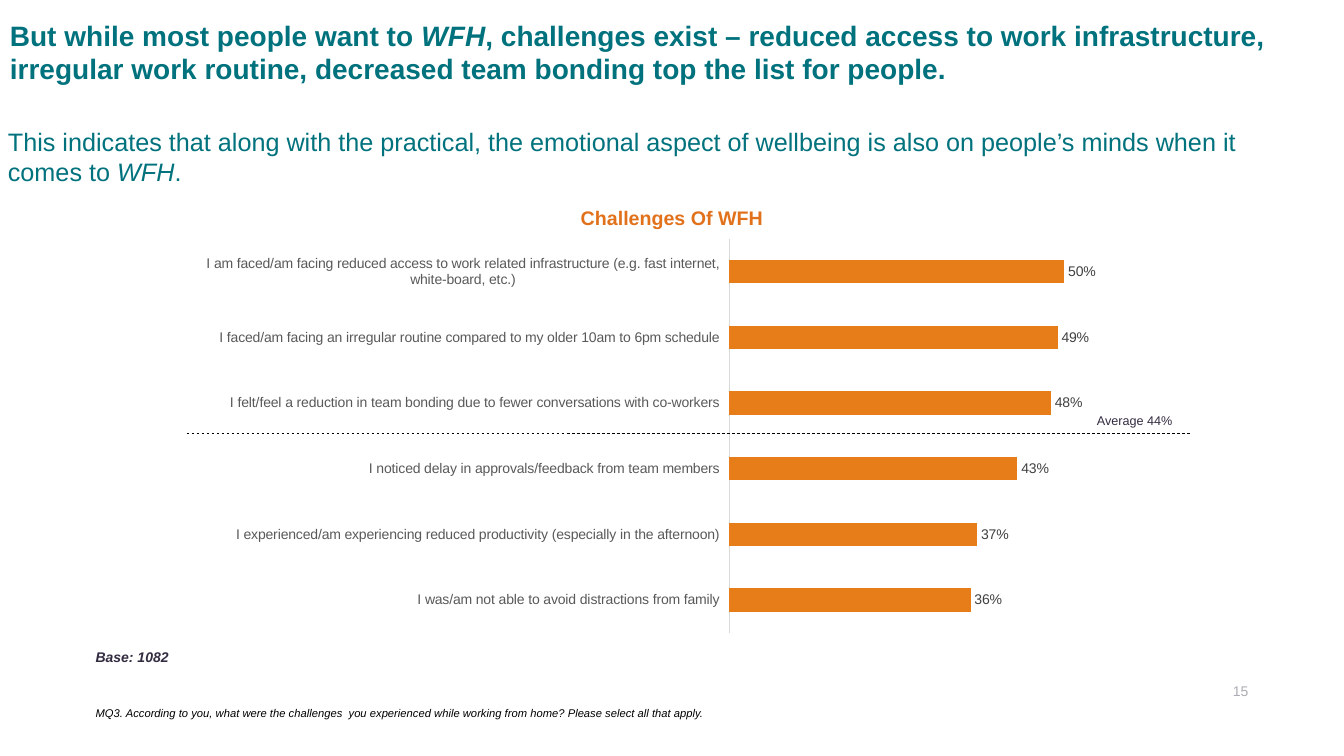
from lxml import etree
from pptx import Presentation
from pptx.chart.data import CategoryChartData
from pptx.dml.color import RGBColor
from pptx.enum.chart import XL_CHART_TYPE, XL_LABEL_POSITION, XL_TICK_LABEL_POSITION, XL_TICK_MARK
from pptx.enum.dml import MSO_LINE
from pptx.enum.shapes import MSO_CONNECTOR
from pptx.enum.text import PP_ALIGN
from pptx.oxml import parse_xml
from pptx.oxml.ns import nsdecls, qn
from pptx.util import Inches, Pt

BAR = XL_CHART_TYPE.BAR_CLUSTERED
OUTSIDE_END = XL_LABEL_POSITION.OUTSIDE_END
LABELS_LOW = XL_TICK_LABEL_POSITION.LOW
NO_TICK = XL_TICK_MARK.NONE
DASH = MSO_LINE.DASH
STRAIGHT = MSO_CONNECTOR.STRAIGHT
LEFT, CENTER, RIGHT = PP_ALIGN.LEFT, PP_ALIGN.CENTER, PP_ALIGN.RIGHT

TEAL = RGBColor(0x00, 0x72, 0x7D)
ORANGE = RGBColor(0xE1, 0x71, 0x1B)
BAR_ORANGE = RGBColor(0xE7, 0x7D, 0x18)
INK = RGBColor(0x33, 0x2C, 0x41)
PALE_INK = RGBColor(0xAD, 0xAB, 0xB3)
BLACK = RGBColor(0x00, 0x00, 0x00)
AXIS_TEXT = RGBColor(0x59, 0x59, 0x59)
VALUE_TEXT = RGBColor(0x40, 0x40, 0x40)
AXIS_LINE = RGBColor(0xD9, 0xD9, 0xD9)

CHALLENGES = {
    "I am faced/am facing reduced access to work related infrastructure (e.g. fast internet, white-board, etc.)": 0.50,
    "I faced/am facing an irregular routine compared to my older 10am to 6pm schedule": 0.49,
    "I felt/feel a reduction in team bonding due to fewer conversations with co-workers": 0.48,
    "I noticed delay in approvals/feedback from team members": 0.43,
    "I experienced/am experiencing reduced productivity (especially in the afternoon)": 0.37,
    "I was/am not able to avoid distractions from family": 0.36,
}
PLOT_SHARES = {"x": 0.56, "y": 0.02, "w": 0.42, "h": 0.96}


class SlideBuilder:
    font_name = "Arial"

    def __init__(self, prs):
        self.prs = prs
        self.s = prs.slides.add_slide(prs.slide_layouts[6])

    def x(self, percent):
        return round(self.prs.slide_width * percent / 100)

    def y(self, percent):
        return round(self.prs.slide_height * percent / 100)

    def box(self, left, top, width, height):
        return self.x(left), self.y(top), self.x(width), self.y(height)

    def style(self, font, size, color, **extra):
        for name, value in {"name": self.font_name, "size": Pt(size), **extra}.items():
            setattr(font, name, value)
        font.color.rgb = color

    def text(self, area, parts, size, color, align=LEFT, **extra):
        tf = self.s.shapes.add_textbox(*self.box(*area)).text_frame
        tf.word_wrap = True
        p = tf.paragraphs[0]
        p.alignment = align
        for part in parts:
            r = p.add_run()
            r.text = part
            self.style(r.font, size, color, **extra)
            if part == "WFH":
                r.font.italic = True

    def dashed_line(self, left, right, level):
        line = self.s.shapes.add_connector(
            STRAIGHT, self.x(left), self.y(level), self.x(right), self.y(level))
        line.line.color.rgb = BLACK
        line.line.width = Pt(0.5)
        line.line.dash_style = DASH
        etree.SubElement(line._element.spPr, qn("a:effectLst"))

    def bar_chart(self, area, values):
        data = CategoryChartData(number_format="0%")
        data.categories = list(values)
        data.add_series("Series 1", list(values.values()))
        chart = self.s.shapes.add_chart(BAR, *self.box(*area), data).chart
        chart.has_title = chart.has_legend = False
        self.style(chart.font, 10, BLACK)

        plot = chart.plots[0]
        plot.gap_width = 182
        plot.vary_by_categories = False
        fill = plot.series[0].format.fill
        fill.solid()
        fill.fore_color.rgb = BAR_ORANGE
        plot.has_data_labels = True
        labels = plot.data_labels
        formats = {"show_value": True, "position": OUTSIDE_END,
                   "number_format": "0%", "number_format_is_linked": False}
        for name, value in formats.items():
            setattr(labels, name, value)
        self.style(labels.font, 10, VALUE_TEXT)

        cats, vals = chart.category_axis, chart.value_axis
        formats = {"reverse_order": True, "major_tick_mark": NO_TICK,
                   "minor_tick_mark": NO_TICK, "tick_label_position": LABELS_LOW}
        for name, value in formats.items():
            setattr(cats, name, value)
        self.style(cats.tick_labels.font, 10, AXIS_TEXT)
        cats.format.line.color.rgb = AXIS_LINE
        cats.format.line.width = Pt(0.75)
        formats = {"visible": False, "has_major_gridlines": False,
                   "minimum_scale": 0, "maximum_scale": 0.6}
        for name, value in formats.items():
            setattr(vals, name, value)
        self.place_plot(chart)

    def place_plot(self, chart):
        area = chart._chartSpace.chart.plotArea
        for old in area.findall(qn("c:layout")):
            area.remove(old)
        modes = '<c:layoutTarget val="inner"/><c:xMode val="edge"/><c:yMode val="edge"/>'
        shares = "".join(f'<c:{name} val="{share}"/>' for name, share in PLOT_SHARES.items())
        area.insert(0, parse_xml(
            f'<c:layout {nsdecls("c")}><c:manualLayout>{modes}{shares}</c:manualLayout></c:layout>'))


def main():
    prs = Presentation()
    prs.slide_width, prs.slide_height = Inches(13.33), Inches(7.5)
    b = SlideBuilder(prs)
    b.text((85.67, 89.6, 7.95, 3.6), ["15"], 10, PALE_INK, RIGHT)
    b.text((6.38, 92.8, 74.5, 3.2),
           ["MQ3. According to you, what were the challenges  you experienced while "
            "working from home? Please select all that apply."], 8, BLACK, italic=True)
    b.text((6.38, 85.07, 13.35, 3.6), ["Base: 1082"], 10, INK, bold=True, italic=True)
    b.bar_chart((14.4, 30.53, 71.2, 54.27), CHALLENGES)
    b.dashed_line(13.88, 88.6, 57.33)
    b.text((80.87, 54, 7.73, 3.33), ["Average 44%"], 9, INK)
    b.text((35.33, 26.53, 29.33, 4.53), ["Challenges Of WFH"], 14, ORANGE, CENTER, bold=True)
    b.text((0, 1.73, 99.25, 10.27),
           ["But while most people want to ", "WFH",
            ", challenges exist – reduced access to work infrastructure, irregular work "
            "routine, decreased team bonding top the list for people."], 20, TEAL, bold=True)
    b.text((-0.15, 16, 94.97, 9.47),
           ["This indicates that along with the practical, the emotional aspect of wellbeing "
            "is also on people’s minds when it comes to ", "WFH", "."], 18, TEAL)
    prs.save("out.pptx")


if __name__ == "__main__":
    main()
